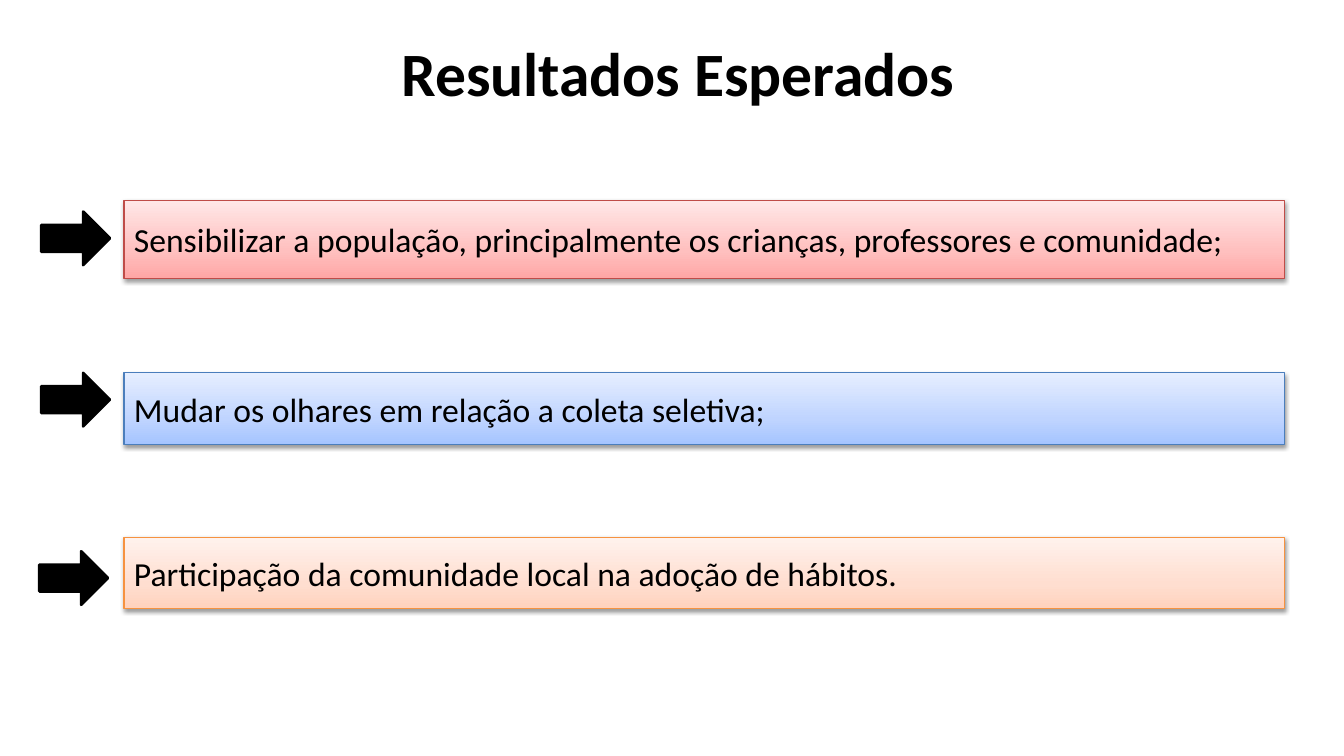
import copy
import lxml.etree
import pptx
import pptx.dml.color
import pptx.enum.shapes
import pptx.enum.text
import pptx.oxml
import pptx.oxml.ns
import pptx.util

Inches = pptx.util.Inches
Pt = pptx.util.Pt
SHAPES = pptx.enum.shapes.MSO_SHAPE
STOPS = (0, 0.35, 1)

# box (left, top, width, height), arrow offset, gradient, line, text
GOALS = [
    ((0.41, 1.99, 12.33, 0.77), (0, 0.11), ("FFA6A5", "FFC0BF", "FFE7E7"), "BF4C48",
     "Sensibilizar a população, principalmente os crianças, professores e comunidade;"),
    ((0.41, 3.7, 12.33, 0.71), (0, 0), ("A4C4FF", "BFD4FF", "E6EEFF"), "4B7EBC",
     "Mudar os olhares em relação a coleta seletiva;"),
    ((0.41, 5.33, 12.33, 0.71), (-0.02, 0.14), ("FFD2BD", "FFDED0", "FFF2ED"), "F69240",
     "Participação da comunidade local na adoção de hábitos."),
]


def color(value):
    return pptx.dml.color.RGBColor.from_string(value)


def style(par, size, bold, align):
    par.alignment = align
    par.font.name = "Calibri"
    par.font.size = Pt(size)
    par.font.bold = bold
    par.font.color.rgb = color("000000")


def shade(shape, hues):
    """Fill the shape with three stops, the first at the bottom."""
    shape.fill.gradient()
    shape.fill.gradient_angle = 90
    stop = shape._element.spPr.find(".//" + pptx.oxml.ns.qn("a:gs"))
    stop.addnext(copy.deepcopy(stop))
    for part, place, hue in zip(shape.fill.gradient_stops, STOPS, hues):
        part.position = place
        part.color.rgb = color(hue)


def drop(shape):
    """Give the shape a soft shadow below it."""
    shape.shadow.inherit = False
    effect = shape._element.spPr.find(pptx.oxml.ns.qn("a:effectLst"))
    effect.append(pptx.oxml.parse_xml(
        f'<a:outerShdw {pptx.oxml.ns.nsdecls("a")} blurRad="{Pt(3.1)}" '
        f'dist="{Pt(1.6)}" dir="5400000" rotWithShape="0">'
        '<a:srgbClr val="000000"><a:alpha val="38000"/></a:srgbClr></a:outerShdw>'))


def add_title(slide, box, text):
    title = slide.shapes.title
    title.left, title.top, title.width, title.height = map(Inches, box)
    frame = title.text_frame
    frame.text = text
    frame.auto_size = pptx.enum.text.MSO_AUTO_SIZE.NONE
    frame.vertical_anchor = pptx.enum.text.MSO_ANCHOR.MIDDLE
    style(frame.paragraphs[0], 44, True, pptx.enum.text.PP_ALIGN.CENTER)


def add_arrow(slide, left, top):
    arrow = slide.shapes.add_shape(
        SHAPES.RIGHT_ARROW, *map(Inches, (left, top, 0.68, 0.53)))
    arrow.shadow.inherit = False
    arrow.fill.solid()
    arrow.fill.fore_color.rgb = color("000000")
    arrow.line.color.rgb = color("000000")
    arrow.line.width = Pt(2)


def add_goal(slide, box, shift, hues, edge, text):
    """Place an arrow at the left of the box and a text bar in the rest."""
    left, top, width, height = box
    add_arrow(slide, left + shift[0], top + shift[1])
    indent = 0.82
    bar = slide.shapes.add_shape(
        SHAPES.RECTANGLE, *map(Inches, (left + indent, top, width - indent, height)))
    shade(bar, hues)
    bar.line.color.rgb = color(edge)
    bar.line.width = Pt(0.75)
    drop(bar)
    frame = bar.text_frame
    frame.text = text
    frame.word_wrap = True
    frame.vertical_anchor = pptx.enum.text.MSO_ANCHOR.MIDDLE
    style(frame.paragraphs[0], 24, False, pptx.enum.text.PP_ALIGN.LEFT)


def main():
    deck = pptx.Presentation()
    deck.slide_width = Inches(13.33)
    deck.slide_height = Inches(7.5)
    slide = deck.slides.add_slide(deck.slide_layouts.get_by_name("Title Only"))
    add_title(slide, (0.73, 0.39, 12, 0.65), "Resultados Esperados")
    for goal in GOALS:
        add_goal(slide, *goal)
    deck.save("out.pptx")


if __name__ == "__main__":
    main()
